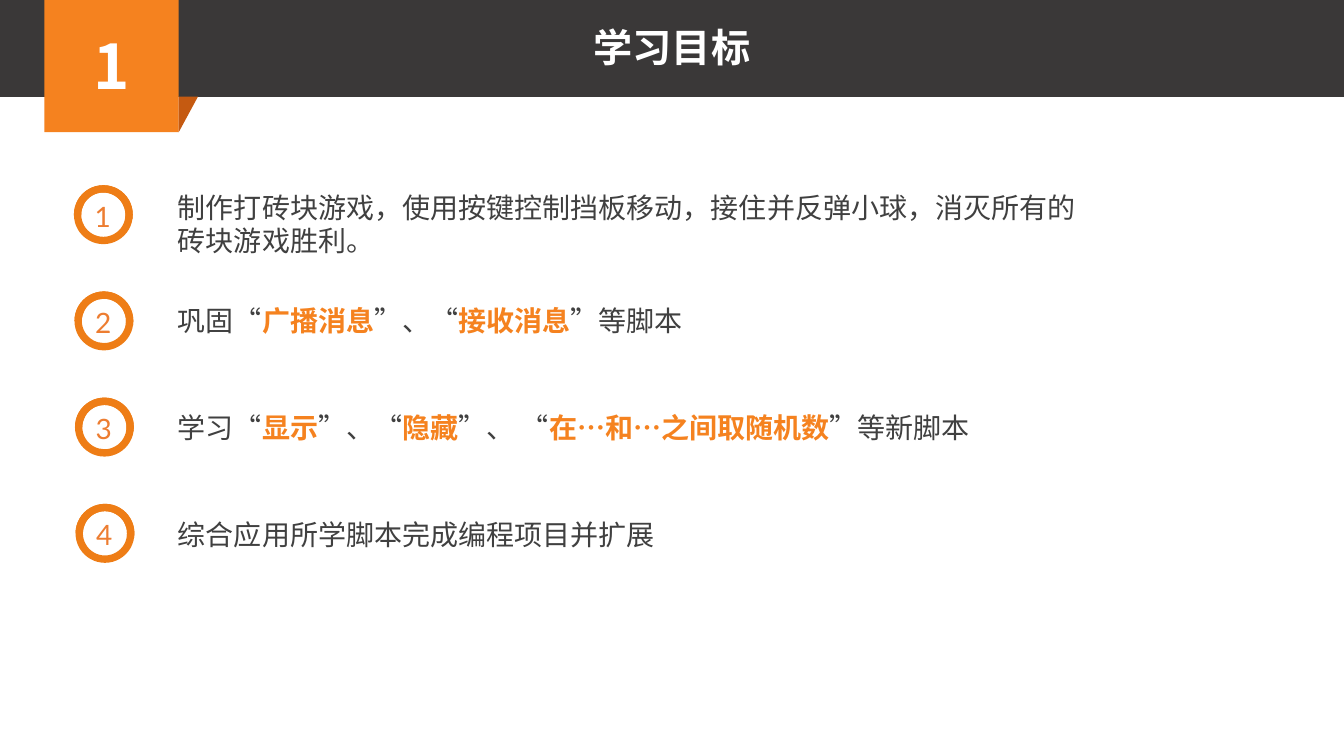
from dataclasses import dataclass

from lxml.etree import SubElement
from pptx import Presentation
from pptx.dml.color import RGBColor
from pptx.enum.lang import MSO_LANGUAGE_ID
from pptx.enum.shapes import MSO_SHAPE
from pptx.enum.text import MSO_ANCHOR, MSO_AUTO_SIZE, PP_ALIGN
from pptx.oxml.ns import qn
from pptx.util import Inches, Pt


@dataclass(frozen=True)
class Theme:
    bar: str = "3A3838"
    accent: str = "F5821F"
    fold: str = "C55A11"
    ring: str = "EE7D16"
    number: str = "ED7D31"
    body: str = "404040"
    white: str = "FFFFFF"
    font: str = "Noto Sans CJK SC"
    number_font: str = "Lato"
    badge_size: int = 44
    title_size: int = 28
    body_size: int = 20


def add_text(paragraph, text, *, size, color, font, bold=False):
    run = paragraph.add_run()
    run.text = text
    run.font.size = Pt(size)
    run.font.bold = bold
    run.font.color.rgb = RGBColor.from_string(color)
    run.font.name = font
    run.font.language_id = MSO_LANGUAGE_ID.SIMPLIFIED_CHINESE
    SubElement(run.font._element, qn("a:ea"), typeface=font)


class SlideBuilder:
    def __init__(self, presentation, theme):
        self.theme = theme
        self.width = presentation.slide_width
        self.height = presentation.slide_height
        self.slide = presentation.slides.add_slide(presentation.slide_layouts[5])

    def area(self, left, top, width, height):
        return (
            round(self.width * left / 100),
            round(self.height * top / 100),
            round(self.width * width / 100),
            round(self.height * height / 100),
        )

    def shape(self, kind, area, color, adjustments=(), parent=None):
        shape = (parent or self.slide).shapes.add_shape(kind, *self.area(*area))
        shape.shadow.inherit = False
        shape.fill.solid()
        shape.fill.fore_color.rgb = RGBColor.from_string(color)
        shape.line.fill.background()
        for index, value in enumerate(adjustments):
            shape.adjustments[index] = value
        return shape

    def text_box(self, area, pieces, wrap=True, parent=None, **text_format):
        box = (parent or self.slide).shapes.add_textbox(*self.area(*area))
        box.text_frame.word_wrap = wrap
        box.text_frame.auto_size = MSO_AUTO_SIZE.SHAPE_TO_FIT_TEXT
        for text, emphasis in pieces:
            color = self.theme.accent if emphasis else self.theme.body
            add_text(box.text_frame.paragraphs[0], text,
                     **{"color": color, "bold": emphasis, "font": self.theme.font,
                        "size": self.theme.body_size, **text_format})

    def title(self, area, text):
        title = self.slide.shapes.title
        title.left, title.top, title.width, title.height = self.area(*area)
        frame = title.text_frame
        frame.word_wrap = True
        frame.auto_size = MSO_AUTO_SIZE.SHAPE_TO_FIT_TEXT
        frame.vertical_anchor = MSO_ANCHOR.TOP
        frame.paragraphs[0].alignment = PP_ALIGN.CENTER
        add_text(frame.paragraphs[0], text, size=self.theme.title_size,
                 color=self.theme.white, font=self.theme.font, bold=True)
        self.slide.shapes._spTree.append(title._element)

    def header(self, number, text):
        theme = self.theme
        self.shape(MSO_SHAPE.RECTANGLE, (0, -0.4, 100, 13.2), theme.bar)
        badge = self.shape(MSO_SHAPE.RECTANGLE, (3.3, -0.4, 10, 17.9), theme.accent)
        badge.text_frame.vertical_anchor = MSO_ANCHOR.MIDDLE
        paragraph = badge.text_frame.paragraphs[0]
        paragraph.alignment = PP_ALIGN.CENTER
        add_text(paragraph, number, size=theme.badge_size, color=theme.white,
                 font=theme.font, bold=True)
        fold = self.shape(MSO_SHAPE.RIGHT_TRIANGLE, (13.3, 12.8, 1.43, 4.7), theme.fold)
        fold._element.spPr.find(qn("a:xfrm")).set("flipV", "1")
        self.title((33.6, 2.4, 32.8, 7.6), text)

    def numbered_ring(self, left, top, number):
        group = self.slide.shapes.add_group_shape()
        ring = (left, top, 4.38, 7.8)
        self.shape(MSO_SHAPE.DONUT, ring, self.theme.ring, [0.125], group)
        self.shape(MSO_SHAPE.BLOCK_ARC, ring, self.theme.ring,
                   [107.95, 5.13, 0.125], group)
        self.text_box((left + 0.8, top + 1.2, 2.7, 5.87), [(str(number), False)],
                      wrap=False, parent=group, color=self.theme.number,
                      font=self.theme.number_font)


GOALS = [
    [("制作打砖块游戏，使用按键控制挡板移动，接住并反弹小球，消灭所有的砖块游戏胜利。", False)],
    [("巩固“", False), ("广播消息", True), ("”、“", False),
     ("接收消息", True), ("”等脚本", False)],
    [("学习“", False), ("显示", True), ("”、“", False), ("隐藏", True),
     ("”、 “", False), ("在…和…之间取随机数", True), ("”等新脚本", False)],
    [("综合应用所学脚本完成编程项目并扩展", False)],
]


def main():
    presentation = Presentation()
    presentation.slide_width = Inches(13.33)
    presentation.slide_height = Inches(7.5)
    builder = SlideBuilder(presentation, Theme())
    builder.header("1", "学习目标")
    for row, goal in enumerate(GOALS):
        builder.numbered_ring(5.5 + 0.04 * row, 24.5 + 14.05 * row, row + 1)
        if row == 0:
            text_area = (12.5, 24.5, 69.6, 10.3)
        else:
            text_area = (12.5, 25.3 + 14.15 * row, 72.4, 5.87)
        builder.text_box(text_area, goal)
    presentation.save("out.pptx")


if __name__ == "__main__":
    main()
